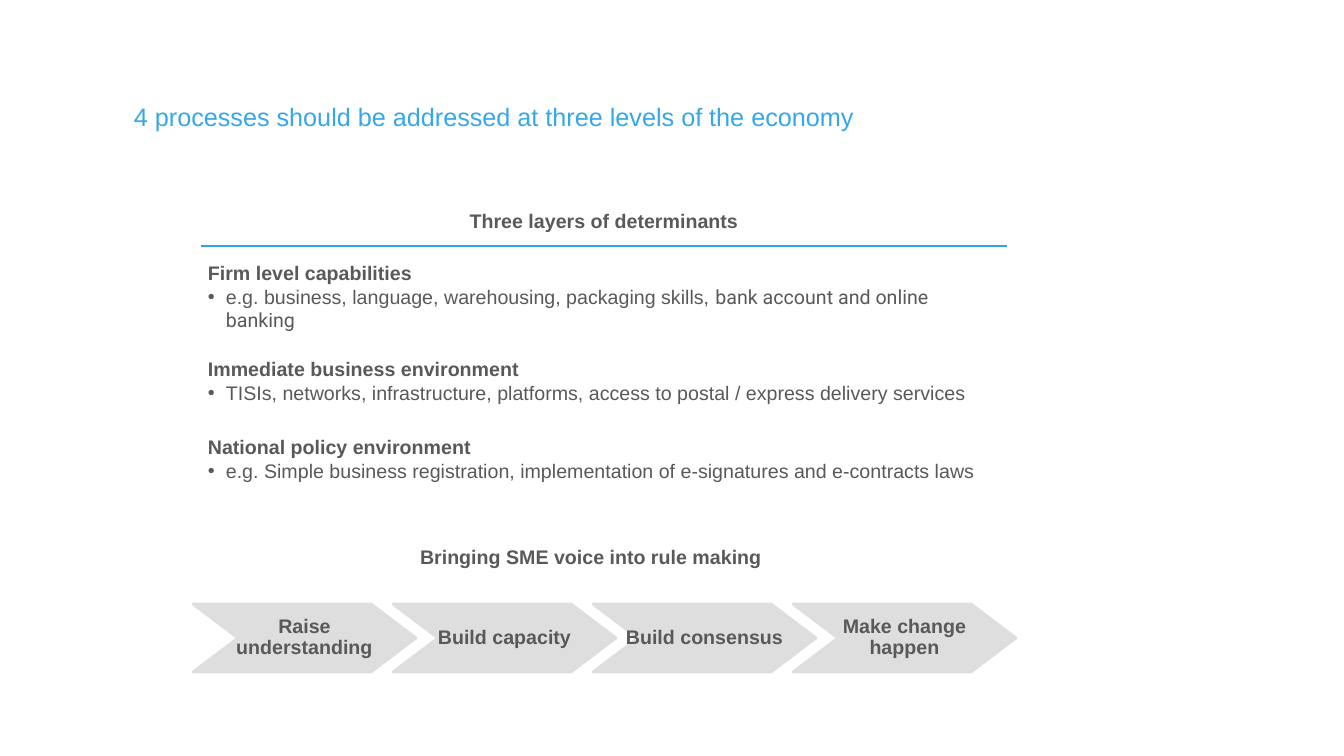
"""Build a slide on four processes addressed at three levels of the economy."""
from lxml import etree
from pptx import Presentation
from pptx import util as u
from pptx.dml.color import RGBColor
from pptx.enum import shapes, text
from pptx.oxml import ns

PX = 914400 / 100.8
COLORS = {"paper": "FFFFFF", "title": "36A7E9", "rule": "30A4E8",
          "body": "595959", "step": "DEDEDE"}


def px(*lengths):
    return [u.Emu(round(length * PX)) for length in lengths]


def style(run, size=14, color="body", bold=False, font="Arial"):
    run.font.size = u.Pt(size)
    run.font.name = font
    run.font.bold = bold
    run.font.color.rgb = RGBColor.from_string(COLORS[color])


deck = Presentation()
deck.slide_width, deck.slide_height = px(1344, 756)
slide = deck.slides.add_slide(deck.slide_layouts[6])
slide.background.fill.solid()
slide.background.fill.fore_color.rgb = RGBColor.from_string(COLORS["paper"])

title = slide.shapes.add_textbox(*px(124, 96, 960, 69)).text_frame
title.word_wrap = True
title.text = "4 processes should be addressed at three levels of the economy"
style(title.paragraphs[0].runs[0], size=18, color="title")

rule = slide.shapes.add_connector(shapes.MSO_CONNECTOR.STRAIGHT, *px(201, 246, 1007, 246))
rule.line.color.rgb = RGBColor.from_string(COLORS["rule"])
rule.line.width = u.Pt(1.5)
etree.SubElement(rule._element.spPr, ns.qn("a:effectLst"))

headings = [
    ("Three layers of determinants", 201, 204, 806),
    ("Bringing SME voice into rule making", 369, 540, 444),
]
for wording, left, top, width in headings:
    heading = slide.shapes.add_textbox(*px(left, top, width, 34)).text_frame
    heading.word_wrap = True
    heading.text = wording
    heading.paragraphs[0].alignment = text.PP_ALIGN.CENTER
    style(heading.paragraphs[0].runs[0], bold=True)

layers = [
    (261, 71, "Firm level capabilities",
     [("e.g. business, language, warehousing, packaging skills, ", "Arial"),
      ("bank account and online banking", "Roboto")]),
    (352, 57, "Immediate business environment",
     [("TISIs, networks, infrastructure, platforms, access to postal / express delivery services",
       "Arial")]),
    (430, 57, "National policy environment",
     [("e.g. Simple business registration, implementation of e-signatures and e-contracts laws",
       "Arial")]),
]
for top, height, level, examples in layers:
    layer = slide.shapes.add_textbox(*px(198, top, 808, height)).text_frame
    layer.word_wrap = True
    layer.vertical_anchor = text.MSO_ANCHOR.MIDDLE
    layer.text = level
    style(layer.paragraphs[0].runs[0], bold=True)
    example = layer.add_paragraph()
    indent = px(18)[0]
    properties = example._p.get_or_add_pPr()
    properties.set("marL", str(indent))
    properties.set("indent", str(-indent))
    etree.SubElement(properties, ns.qn("a:buFont"), typeface="Arial")
    etree.SubElement(properties, ns.qn("a:buChar"), char="•")
    for wording, font in examples:
        run = example.add_run()
        run.text = wording
        style(run, font=font)

processes = ["Raise understanding", "Build capacity", "Build consensus", "Make change happen"]
for index, process in enumerate(processes):
    left, top = 193 + 200 * index, 604
    outline = [(left + x, top + y)
               for x, y in [(0, 0), (178, 0), (223, 34), (178, 68), (0, 68), (45, 34)]]
    builder = slide.shapes.build_freeform(*outline[0], scale=PX)
    builder.add_line_segments(outline[1:], close=True)
    step = builder.convert_to_shape()
    step.shadow.inherit = False
    step.fill.solid()
    step.fill.fore_color.rgb = RGBColor.from_string(COLORS["step"])
    step.line.color.rgb = RGBColor.from_string(COLORS["step"])
    step.line.width = u.Pt(2)
    label = step.text_frame
    label.word_wrap = True
    label.vertical_anchor = text.MSO_ANCHOR.MIDDLE
    label.margin_left, label.margin_top, label.margin_right, label.margin_bottom = px(24, 1, 24, 1)
    label.text = process
    label.paragraphs[0].alignment = text.PP_ALIGN.CENTER
    label.paragraphs[0].line_spacing = 0.9
    style(label.paragraphs[0].runs[0], bold=True)

deck.save("out.pptx")
